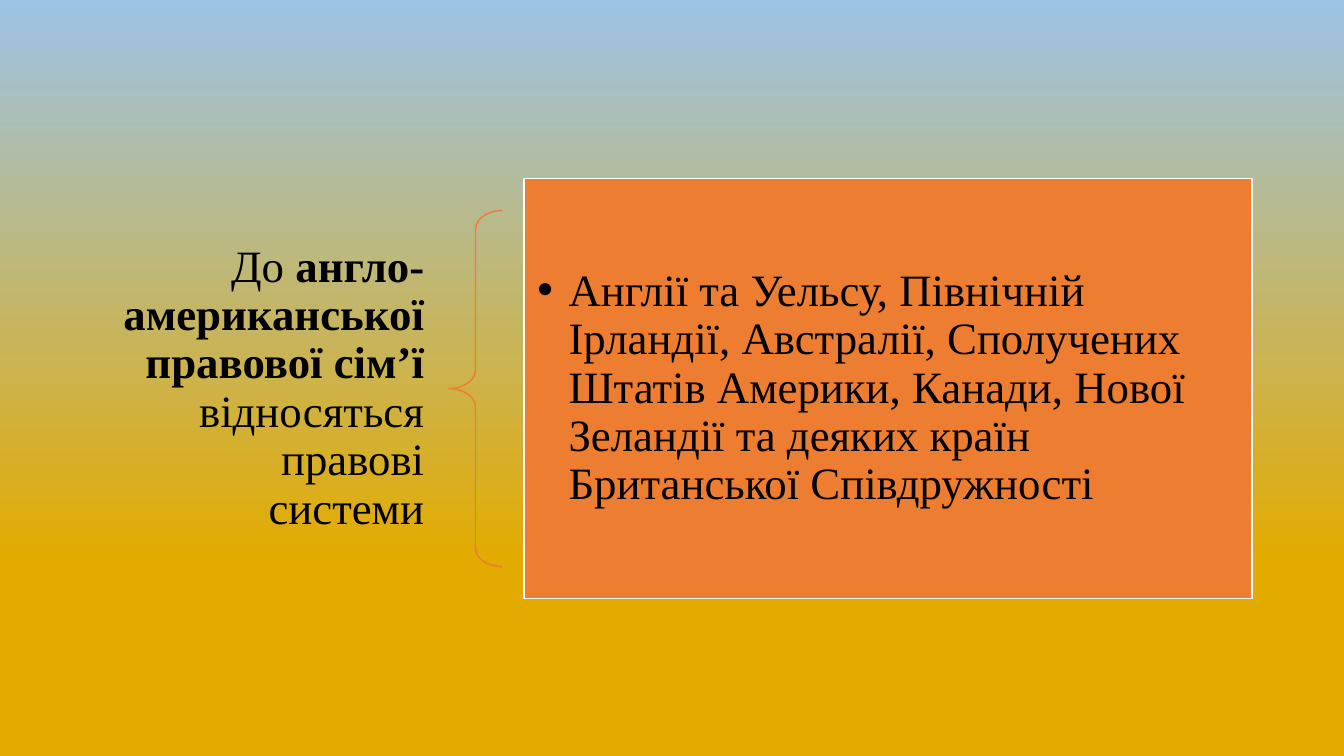
from pptx import Presentation, util as u
from pptx.dml.color import RGBColor
from pptx.enum import shapes, text
from lxml import etree

GOLD = RGBColor(0xE3, 0xAB, 0x00)
SKY = RGBColor(0x9D, 0xC3, 0xE6)
ORANGE = RGBColor(0xED, 0x7D, 0x31)
WHITE = RGBColor(0xFF, 0xFF, 0xFF)
BLACK = RGBColor(0, 0, 0)
MIDDLE = 51.4  # percent of slide height on which everything is centred

prs = Presentation()
prs.slide_width, prs.slide_height = u.Inches(13.33), u.Inches(7.5)
s = prs.slides.add_slide(prs.slide_layouts[1])


def centred_box(left, width, height):
    """Turn percentages of the slide into left, top, width, height."""
    x, y = prs.slide_width / 100, prs.slide_height / 100
    return [int(v) for v in (left * x, (MIDDLE - height / 2) * y, width * x, height * y)]


def write(sp, box, inset_x, inset_y, align, runs):
    sp.left, sp.top, sp.width, sp.height = box
    tf = sp.text_frame
    frame_format = {
        "word_wrap": True,
        "auto_size": text.MSO_AUTO_SIZE.NONE,
        "vertical_anchor": text.MSO_ANCHOR.MIDDLE,
        "margin_left": u.Inches(inset_x),
        "margin_right": u.Inches(inset_x),
        "margin_top": u.Inches(inset_y),
        "margin_bottom": u.Inches(inset_y),
    }
    for name, value in frame_format.items():
        setattr(tf, name, value)
    p = tf.paragraphs[0]
    p.alignment, p.line_spacing, p.space_before = align, 0.9, u.Pt(0)
    for words, bold in runs:
        r = p.add_run()
        r.text = words
        font_format = {"name": "Times New Roman", "size": u.Pt(32), "bold": bold}
        for name, value in font_format.items():
            setattr(r.font, name, value)
        r.font.color.rgb = BLACK
    return p


# Background: gold below, sky above
fill = s.background.fill
fill.gradient()
fill.gradient_angle = 90
for stop, position, colour in zip(fill.gradient_stops, (0.26, 1), (GOLD, SKY)):
    stop.position = position
    stop.color.rgb = colour

# Heading to the left of the brace
write(s.shapes.title, centred_box(6.9, 26.55, 50.93), 0.25, 0.09, text.PP_ALIGN.RIGHT, [
    ("До ", False),
    ("англо-американської правової сім’ї", True),
    (" відносяться правові системи", False),
])

# Brace
brace = s.shapes.add_shape(shapes.MSO_SHAPE.LEFT_BRACE, *centred_box(33.4, 3.97, 47.1))
brace.adjustments[0], brace.adjustments[1] = 0.35, 0.5
brace.shadow.inherit = False
brace.fill.background()

# Orange panel with the list
panel = s.placeholders[1]
p = write(panel, centred_box(39, 54.15, 55.6), 0.13, 0.13, text.PP_ALIGN.LEFT, [
    ("Англії та Уельсу, Північній Ірландії, Австралії, Сполучених Штатів Америки, "
     "Канади, Нової Зеландії та деяких країн Британської Співдружності", False),
])
panel.fill.solid()
panel.fill.fore_color.rgb = ORANGE
pPr = p._p.get_or_add_pPr()
pPr.set("marL", str(u.Inches(0.31)))
pPr.set("indent", str(-u.Inches(0.31)))
ns = pPr.nsmap["a"]
etree.SubElement(pPr, f"{{{ns}}}buChar", char="•")

for sp, colour in ((brace, ORANGE), (panel, WHITE)):
    sp.line.color.rgb = colour
    sp.line.width = u.Pt(1)

prs.save("out.pptx")
